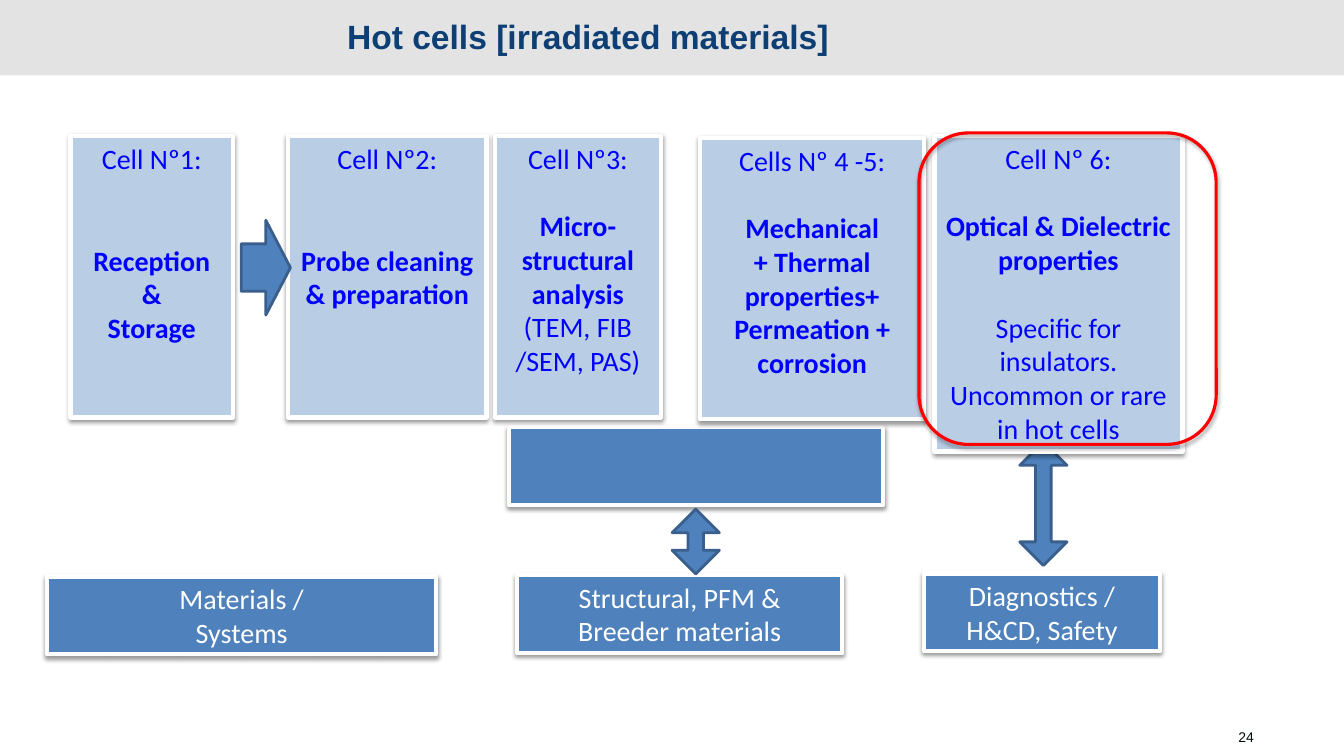
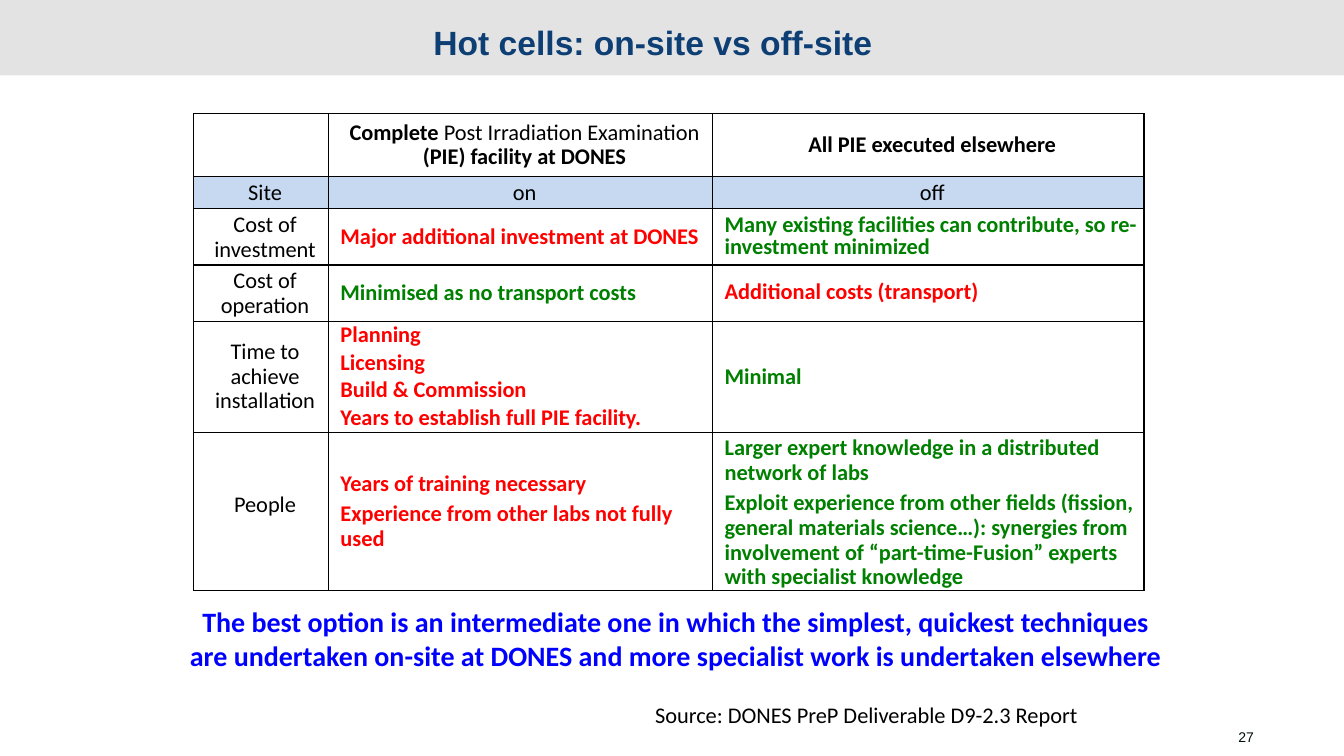
import pptx
import pptx.util
import pptx.dml.color
import pptx.enum.shapes
import pptx.enum.text
import pptx.oxml
import pptx.oxml.ns
from dataclasses import dataclass
from pptx.util import Cm, Pt

SHAPE = pptx.enum.shapes.MSO_SHAPE
ALIGN = pptx.enum.text.PP_ALIGN
ANCHOR = pptx.enum.text.MSO_ANCHOR


@dataclass(frozen=True)
class Theme:
    heading_font: str = "Arial"
    body_font: str = "Calibri"
    band: str = "E3E3E3"
    heading: str = "0D3F75"
    number: str = "000D08"
    white: str = "FFFFFF"
    black: str = "000000"
    blue: str = "4F81BD"
    blue_edge: str = "3A5F8C"
    pale_blue: str = "B9CDE5"
    site_row: str = "C6D9F1"
    strong_blue: str = "0000FF"
    red: str = "FF0000"
    green: str = "008000"
    heading_size: float = 24
    body_size: float = 20
    table_size: float = 16
    number_size: float = 10
    body_line: float = 24.4


THEME = Theme()


@dataclass(frozen=True)
class Line:
    text: str
    bold: bool = False
    blank_lines: int = 0


@dataclass(frozen=True)
class Entry:
    texts: tuple
    color: str = THEME.black
    spacing: object = 0.9


# Content: boxes are (left, top, width, height) in centimetres
BAND = (0, 0, 33.87, 1.9)
NUMBER_BOX = (30.96, 18.24, 1.24, 0.69)

CELL_TOP, CELL_HEIGHT = 3.43, 7.09
CELLS = [
    ((1.78, CELL_TOP, 4.09, CELL_HEIGHT),
     [Line("Cell Nº1:"), Line("Reception", True, 2), Line("&", True), Line("Storage", True)]),
    ((7.26, CELL_TOP, 5.0, CELL_HEIGHT),
     [Line("Cell Nº2:"), Line("Probe cleaning & preparation", True, 2)]),
    ((12.47, CELL_TOP, 4.19, CELL_HEIGHT),
     [Line("Cell Nº3:"), Line("Micro-structural analysis", True, 1),
      Line("(TEM, FIB /SEM, PAS)")]),
    ((17.65, 3.48, 5.64, CELL_HEIGHT),
     [Line("Cells Nº 4 -5:"), Line("Mechanical", True, 1),
      Line("+ Thermal properties+ Permeation + corrosion", True)]),
    ((23.55, CELL_TOP, 6.25, 7.95),
     [Line("Cell Nº 6:"), Line("Optical & Dielectric properties", True, 1),
      Line("Specific for insulators. Uncommon or rare in hot cells", False, 1)]),
]
GROUP_HEIGHT = 1.96
GROUPS = [
    ((12.83, 10.77, 9.42, GROUP_HEIGHT), []),
    ((1.19, 14.53, 9.8, GROUP_HEIGHT), [Line("Materials /"), Line("Systems")]),
    ((13.03, 14.5, 8.2, GROUP_HEIGHT), [Line("Structural, PFM &"), Line("Breeder materials")]),
    ((23.29, 14.45, 5.94, GROUP_HEIGHT), [Line("Diagnostics /"), Line("H&CD, Safety")]),
]
DOUBLE_ARROWS = [(16.94, 12.83, 1.19, 1.63), (25.7, 11.13, 1.19, 3.12)]
TRANSFER_ARROW = (6.08, 5.55, 1.24, 2.39)
HIGHLIGHT = (23.16, 3.35, 7.49, 7.85)

TABLE_LEFT, TABLE_TOP = 4.88, 2.87
COLUMN_WIDTHS = [3.4, 9.68, 10.87]
ROW_HEIGHTS = [1.58, 0.78, 1.41, 1.4, 2.77, 3.98]
SITE_ROW = 1
# A text in a table is a plain string or a list of (text, bold) parts
COMPARISON = [
    [Entry(()),
     Entry(([("Complete ", True), ("Post Irradiation Examination", False),
             (" (PIE) facility at DONES", True)],)),
     Entry(([("All PIE executed elsewhere", True)],))],
    [Entry(("Site",)), Entry(("on",)), Entry(("off",))],
    [Entry(("Cost of investment",)),
     Entry(("Major additional investment at DONES",), THEME.red),
     Entry(("Many existing facilities can contribute, so re-investment minimized",),
           THEME.green, 0.8)],
    [Entry(("Cost of operation",)),
     Entry(("Minimised as no transport costs",), THEME.green),
     Entry(("Additional costs (transport)",), THEME.red, 0.8)],
    [Entry(("Time to achieve installation",)),
     Entry(("Planning", "Licensing", "Build & Commission",
            "Years to establish full PIE facility."), THEME.red, 0.8),
     Entry(("Minimal",), THEME.green)],
    [Entry(("People",), THEME.black, Pt(10)),
     Entry(("Years of training necessary", "Experience from other labs not fully used"),
           THEME.red),
     Entry(("Larger expert knowledge in a distributed network of labs",
            "Exploit experience from other fields (fission, general materials science…): "
            "synergies from involvement of “part-time-Fusion” experts with specialist "
            "knowledge"), THEME.green)],
]
CONCLUSION = ("The best option is an intermediate one in which the simplest, quickest "
              "techniques are undertaken on-site at DONES and more specialist work is "
              "undertaken elsewhere")
SOURCE = "Source: DONES PreP Deliverable D9-2.3 Report"


# Helpers
def rgb(color):
    return pptx.dml.color.RGBColor.from_string(color)


def lengths(box):
    return [Cm(value) for value in box]


def style_font(font, size, color, name=THEME.body_font, bold=None):
    font.size, font.name, font.bold = Pt(size), name, bold
    font.color.rgb = rgb(color)


def write_lines(frame, lines, color, size=THEME.body_size, align=ALIGN.CENTER,
                font_name=THEME.body_font):
    for index, line in enumerate(lines):
        para = frame.add_paragraph() if index else frame.paragraphs[0]
        para.text = line.text
        para.alignment = align
        if line.blank_lines:
            para.space_before = Pt(line.blank_lines * THEME.body_line)
        style_font(para.font, size, color, font_name, line.bold)


def add_text(page, box, line, color, wrap=True, **style):
    frame = page.shapes.add_textbox(*lengths(box)).text_frame
    frame.word_wrap = wrap
    write_lines(frame, [line], color, **style)


def add_block(page, kind, box, fill=None, edge=None, edge_width=0):
    block = page.shapes.add_shape(kind, *lengths(box))
    block.shadow.inherit = False
    if fill:
        block.fill.solid()
        block.fill.fore_color.rgb = rgb(fill)
    else:
        block.fill.background()
    if edge:
        block.line.color.rgb = rgb(edge)
        block.line.width = Pt(edge_width)
    else:
        block.line.fill.background()
    return block


def cast_shadow(block, opacity):
    effects = block.element.spPr.find(pptx.oxml.ns.qn("a:effectLst"))
    effects.append(pptx.oxml.parse_xml(
        f'<a:outerShdw {pptx.oxml.ns.nsdecls("a")} blurRad="{Pt(3.1)}" dist="{Pt(1.7)}" '
        f'dir="5400000" rotWithShape="0"><a:srgbClr val="{THEME.black}">'
        f'<a:alpha val="{opacity * 1000}"/></a:srgbClr></a:outerShdw>'))


def add_panel(page, box, lines, fill, color):
    panel = add_block(page, SHAPE.RECTANGLE, box, fill, THEME.white, 3)
    cast_shadow(panel, 38)
    panel.text_frame.word_wrap = True
    panel.text_frame.vertical_anchor = ANCHOR.TOP
    write_lines(panel.text_frame, lines, color)


def add_page(deck, title_text, title_box, align, number):
    page = deck.slides.add_slide(deck.slide_layouts[5])
    title = page.shapes.title
    title.left, title.top, title.width, title.height = lengths(title_box)
    frame = title.text_frame
    frame.word_wrap = True
    frame.auto_size = pptx.enum.text.MSO_AUTO_SIZE.NONE
    frame.vertical_anchor = ANCHOR.TOP
    write_lines(frame, [Line(title_text, True)], THEME.heading, THEME.heading_size,
                align, THEME.heading_font)
    band = add_block(page, SHAPE.RECTANGLE, BAND, THEME.band)
    title.element.addprevious(band.element)
    add_text(page, NUMBER_BOX, Line(str(number)), THEME.number, wrap=False,
             size=THEME.number_size, align=ALIGN.LEFT, font_name=THEME.heading_font)
    return page


def border_cell(cell):
    properties = cell._tc.get_or_add_tcPr()
    for index, side in enumerate(("lnL", "lnR", "lnT", "lnB")):
        properties.insert(index, pptx.oxml.parse_xml(
            f'<a:{side} {pptx.oxml.ns.nsdecls("a")} w="{Pt(1)}"><a:solidFill>'
            f'<a:srgbClr val="{THEME.black}"/></a:solidFill></a:{side}>'))


def fill_cell(cell, entry, centred, fill):
    cell.vertical_anchor = ANCHOR.MIDDLE
    cell.margin_left = Cm(0.3)
    cell.margin_right = cell.margin_top = cell.margin_bottom = Cm(0.1)
    if fill:
        cell.fill.solid()
        cell.fill.fore_color.rgb = rgb(fill)
    else:
        cell.fill.background()
    border_cell(cell)
    frame = cell.text_frame
    for index, text in enumerate(entry.texts):
        para = frame.add_paragraph() if index else frame.paragraphs[0]
        para.alignment = ALIGN.CENTER if centred else ALIGN.LEFT
        para.line_spacing = entry.spacing
        if index < len(entry.texts) - 1:
            para.space_after = Pt(4)
        parts = [(text, not centred)] if isinstance(text, str) else text
        style_font(para.font, THEME.table_size, entry.color)
        for words, bold in parts:
            span = para.add_run()
            span.text = words
            span.font.bold = bold


# Slides
def build_cells_page(deck):
    page = add_page(deck, "Hot cells [irradiated materials]", (3.4, 0.28, 22.83, 1.96),
                    ALIGN.CENTER, 24)
    for box, lines in GROUPS:
        add_panel(page, box, lines, THEME.blue, THEME.white)
    for box in DOUBLE_ARROWS:
        arrow = add_block(page, SHAPE.UP_DOWN_ARROW, box, THEME.blue, THEME.blue_edge, 2)
        arrow.adjustments[1] = 0.33
    for box, lines in CELLS:
        add_panel(page, box, lines, THEME.pale_blue, THEME.strong_blue)
    add_block(page, SHAPE.RIGHT_ARROW, TRANSFER_ARROW, THEME.blue, THEME.blue_edge, 2)
    highlight = add_block(page, SHAPE.ROUNDED_RECTANGLE, HIGHLIGHT, None, THEME.red, 2.25)
    cast_shadow(highlight, 35)


def build_comparison_page(deck):
    page = add_page(deck, "Hot cells: on-site vs off-site", (10.67, 0.43, 15.29, 1.96),
                    ALIGN.LEFT, 27)
    table = page.shapes.add_table(
        len(ROW_HEIGHTS), len(COLUMN_WIDTHS), Cm(TABLE_LEFT), Cm(TABLE_TOP),
        Cm(sum(COLUMN_WIDTHS)), Cm(sum(ROW_HEIGHTS))).table
    table.first_row = table.horz_banding = False
    for column, width in zip(table.columns, COLUMN_WIDTHS):
        column.width = Cm(width)
    for row_index, (height, entries) in enumerate(zip(ROW_HEIGHTS, COMPARISON)):
        table.rows[row_index].height = Cm(height)
        for column_index, entry in enumerate(entries):
            centred = row_index <= SITE_ROW or column_index == 0
            fill = THEME.site_row if row_index == SITE_ROW else None
            fill_cell(table.cell(row_index, column_index), entry, centred, fill)
    add_text(page, (4.47, 15.11, 25.12, 1.96), Line(CONCLUSION, True), THEME.strong_blue)
    add_text(page, (16.26, 17.55, 13.33, 1.0), Line(SOURCE), THEME.black,
             size=THEME.table_size, align=ALIGN.LEFT)


def main():
    deck = pptx.Presentation()
    deck.slide_width, deck.slide_height = Cm(33.87), Cm(19.05)
    build_cells_page(deck)
    build_comparison_page(deck)
    deck.save("out.pptx")


if __name__ == "__main__":
    main()
